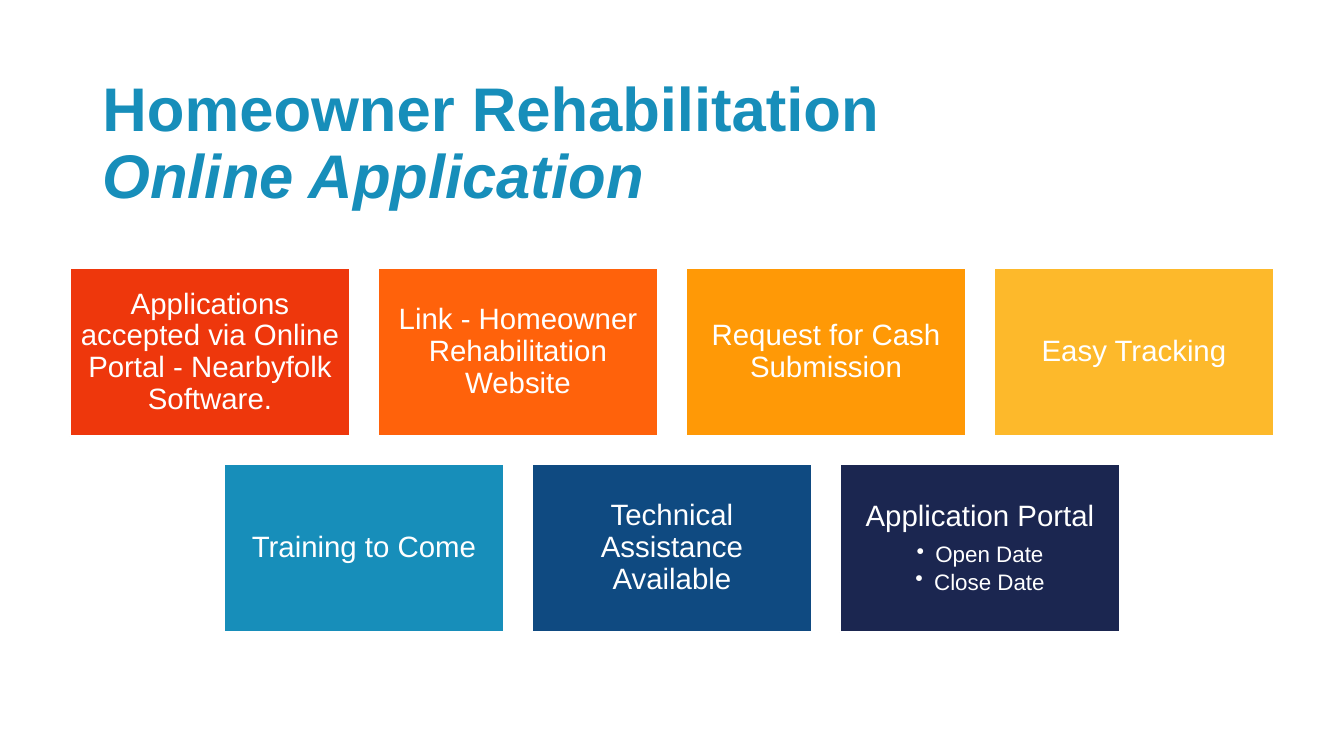
from pptx import Presentation
from pptx.dml.color import RGBColor
from pptx.enum.shapes import MSO_SHAPE
from pptx.enum.text import MSO_ANCHOR, PP_ALIGN
from pptx.oxml.ns import qn
from pptx.util import Pt
from lxml.etree import SubElement

WHITE = RGBColor(0xFF, 0xFF, 0xFF)
RED = RGBColor(0xEE, 0x37, 0x0C)
ORANGE = RGBColor(0xFF, 0x62, 0x0B)
AMBER = RGBColor(0xFF, 0x99, 0x06)
YELLOW = RGBColor(0xFD, 0xB9, 0x2B)
BLUE = RGBColor(0x17, 0x8E, 0xBA)
DEEP_BLUE = RGBColor(0x0F, 0x4A, 0x81)
NAVY = RGBColor(0x1B, 0x26, 0x50)

SLIDE_WIDTH, SLIDE_HEIGHT = 960, 540
TILE_WIDTH, TILE_HEIGHT, GAP = 200, 120, 20
TILES_TOP = 191.5

TILE_ROWS = [
    [
        (RED, "Applications accepted via Online Portal - Nearbyfolk Software.", []),
        (ORANGE, "Link - Homeowner Rehabilitation Website", []),
        (AMBER, "Request for Cash Submission", []),
        (YELLOW, "Easy Tracking", []),
    ],
    [
        (BLUE, "Training to Come", []),
        (DEEP_BLUE, "Technical Assistance Available", []),
        (NAVY, "Application Portal", ["Open Date", "Close Date"]),
    ],
]


def format_paragraph(paragraph, size, color, alignment):
    paragraph.alignment = alignment
    paragraph.line_spacing = 0.9
    paragraph.font.name = "Arial"
    paragraph.font.size = Pt(size)
    paragraph.font.color.rgb = color


prs = Presentation()
prs.slide_width, prs.slide_height = Pt(SLIDE_WIDTH), Pt(SLIDE_HEIGHT)
slide = prs.slides.add_slide(prs.slide_layouts[5])

title = slide.shapes.title
title.left, title.top, title.width, title.height = Pt(66), Pt(50.4), Pt(828), Pt(104.4)
title.text_frame.text = "Homeowner Rehabilitation\nOnline Application"
title.text_frame.vertical_anchor = MSO_ANCHOR.BOTTOM
for line in title.text_frame.paragraphs:
    format_paragraph(line, 44, BLUE, PP_ALIGN.LEFT)
    line.font.bold = True
title.text_frame.paragraphs[1].font.italic = True

for row, tiles in enumerate(TILE_ROWS):
    row_width = len(tiles) * (TILE_WIDTH + GAP) - GAP
    row_left = (SLIDE_WIDTH - row_width) / 2
    row_top = TILES_TOP + row * (TILE_HEIGHT + GAP)
    for column, (color, heading, dates) in enumerate(tiles):
        tile = slide.shapes.add_shape(
            MSO_SHAPE.RECTANGLE,
            Pt(row_left + column * (TILE_WIDTH + GAP)), Pt(row_top),
            Pt(TILE_WIDTH), Pt(TILE_HEIGHT),
        )
        tile.shadow.inherit = False
        tile.fill.solid()
        tile.fill.fore_color.rgb = color
        tile.line.color.rgb = WHITE
        tile.line.width = Pt(1.5)

        frame = tile.text_frame
        frame.word_wrap = True
        frame.vertical_anchor = MSO_ANCHOR.MIDDLE
        frame.margin_left = frame.margin_right = Pt(6.5)
        frame.margin_top = frame.margin_bottom = Pt(6.5)
        frame.text = heading
        format_paragraph(frame.paragraphs[0], 21, WHITE, PP_ALIGN.CENTER)
        if dates:
            frame.paragraphs[0].space_after = Pt(7.5)
        for date in dates:
            item = frame.add_paragraph()
            item.text = date
            item.level = 1
            properties = item._p.get_or_add_pPr()
            properties.set("marL", str(Pt(13.5)))
            properties.set("indent", str(Pt(-13.5)))
            SubElement(properties, qn("a:buChar"), char="•")
            format_paragraph(item, 16, WHITE, PP_ALIGN.CENTER)
            item.space_after = Pt(2.5)

prs.save("out.pptx")
